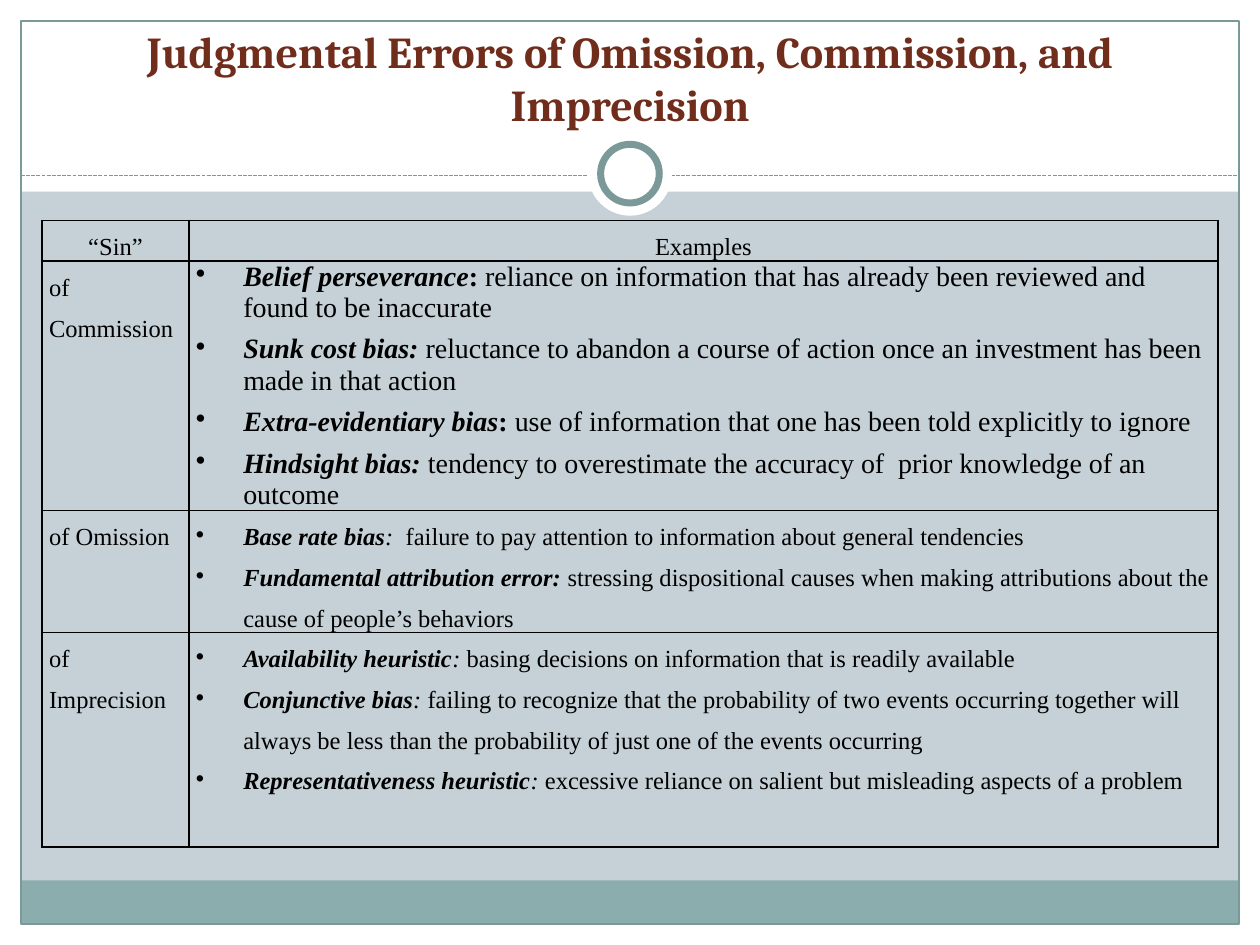
from lxml import etree
from pptx import Presentation
from pptx.dml.color import RGBColor
from pptx.enum.dml import MSO_LINE
from pptx.enum.shapes import MSO_CONNECTOR, MSO_SHAPE
from pptx.enum.text import MSO_ANCHOR, MSO_AUTO_SIZE, PP_ALIGN
from pptx.oxml import parse_xml
from pptx.oxml.ns import nsdecls, qn
from pptx.util import Pt

TEAL = "7C999A"
SERIF = "Times New Roman"


def color(hex_code):
    return RGBColor.from_string(hex_code)


def add_panel(kind, box, fill=None, line=None, width=0.75):
    panel = slide.shapes.add_shape(kind, *map(Pt, box))
    panel.shadow.inherit = False
    if fill:
        panel.fill.solid()
        panel.fill.fore_color.rgb = color(fill)
    else:
        panel.fill.background()
    if line:
        panel.line.color.rgb = color(line)
        panel.line.width = Pt(width)
    else:
        panel.line.fill.background()


prs = Presentation()
prs.slide_width, prs.slide_height = Pt(720), Pt(540)
slide = prs.slides.add_slide(prs.slide_layouts[5])
slide.background.fill.solid()
slide.background.fill.fore_color.rgb = color("C5D1D7")

# Frame: white margins, footer band, outline, dashed rule and ring
for margin in [(0, 528, 720, 12), (0, 0, 720, 109.5),
               (0, 0, 12, 540), (708, 0, 12, 540)]:
    add_panel(MSO_SHAPE.RECTANGLE, margin, "FFFFFF")
add_panel(MSO_SHAPE.RECTANGLE, (11.75, 503, 696, 24.75), "8CADAE")
add_panel(MSO_SHAPE.RECTANGLE, (12, 12, 696, 516), line=TEAL)

rule = slide.shapes.add_connector(MSO_CONNECTOR.STRAIGHT, Pt(12), Pt(100.5), Pt(708), Pt(100.5))
rule.line.color.rgb = color(TEAL)
rule.line.width = Pt(0.75)
rule.line.dash_style = MSO_LINE.SQUARE_DOT
etree.SubElement(rule._element.spPr, qn("a:effectLst"))

add_panel(MSO_SHAPE.OVAL, (336, 75.25, 48, 48), "FFFFFF")
add_panel(MSO_SHAPE.OVAL, (343.25, 82.5, 33.5, 33.5), "FFFFFF", TEAL, 4)

# Title, brought in front of the white margins
title = slide.shapes.title
slide.shapes._spTree.append(title._element)
title.left, title.top, title.width, title.height = Pt(24), Pt(18), Pt(672), Pt(60)
title.text = "Judgmental Errors of Omission, Commission, and Imprecision"
title.text_frame.auto_size = MSO_AUTO_SIZE.NONE
title.text_frame.word_wrap = True
title.text_frame.vertical_anchor = MSO_ANCHOR.BOTTOM
heading = title.text_frame.paragraphs[0]
heading.alignment = PP_ALIGN.CENTER
heading.font.name, heading.font.size, heading.font.bold = "Cambria", Pt(25.2), True
heading.font.color.rgb = color("712D1C")

# Each example: term, colon, colon is bold, colon is italic, explanation
sins = [
    ("of Commission", 140, 16, [
        ("Belief perseverance", ": ", True, False,
         "reliance on information that has already been reviewed and found to be inaccurate"),
        ("Sunk cost bias", ": ", True, True,
         "reluctance to abandon a course of action once an investment has been made in that action"),
        ("Extra-evidentiary bias", ": ", True, False,
         "use of information that one has been told explicitly to ignore"),
        ("Hindsight bias", ": ", True, True,
         "tendency to overestimate the accuracy of  prior knowledge of an outcome"),
    ]),
    ("of Omission", 69.75, 14, [
        ("Base rate bias", ":", False, True,
         "  failure to pay attention to information about general tendencies"),
        ("Fundamental attribution error", ": ", True, True,
         "stressing dispositional causes when making attributions about the cause of people’s behaviors"),
    ]),
    ("of Imprecision", 122.5, 14, [
        ("Availability heuristic", ": ", False, True,
         "basing decisions on information that is readily available"),
        ("Conjunctive bias", ":", False, True,
         " failing to recognize that the probability of two events occurring together will "
         "always be less than the probability of just one of the events occurring"),
        ("Representativeness heuristic", ":", False, True,
         " excessive reliance on salient but misleading aspects of a problem"),
    ]),
]

table = slide.shapes.add_table(4, 2, Pt(24), Pt(126), Pt(672), Pt(350)).table
table.first_row = table.horz_banding = False
table.columns[0].width, table.columns[1].width = Pt(84), Pt(588)
table.rows[0].height = Pt(18)
table.cell(0, 0).text = "“Sin”"
table.cell(0, 1).text = "Examples"
for row, (sin, height, size, examples) in enumerate(sins, 1):
    table.rows[row].height = Pt(height)
    table.cell(row, 0).text = sin
    frame = table.cell(row, 1).text_frame
    for i, (term, colon, bold, italic, explanation) in enumerate(examples):
        para = frame.add_paragraph() if i else frame.paragraphs[0]
        if size == 16:
            para.space_after = Pt(6)
        else:
            para.line_spacing = 1.5
        props = para._p.get_or_add_pPr()
        props.set("marL", str(Pt(27)))
        props.set("indent", str(-Pt(27)))
        etree.SubElement(props, qn("a:buChar")).set("char", "•")
        para.font.size = Pt(size)
        for words, is_bold, is_italic in [(term, True, True), (colon, bold, italic),
                                          (explanation, False, False)]:
            run = para.add_run()
            run.text, run.font.bold, run.font.italic = words, is_bold, is_italic

for index, cell in enumerate(table.iter_cells()):
    cell.margin_left = cell.margin_right = Pt(4)
    cell.margin_top = cell.margin_bottom = 0
    for side in ("lnL", "lnR", "lnT", "lnB"):
        cell._tc.get_or_add_tcPr().append(parse_xml(
            f'<a:{side} {nsdecls("a")} w="{Pt(1)}"><a:solidFill>'
            f'<a:srgbClr val="000000"/></a:solidFill></a:{side}>'))
    cell.fill.background()
    for para in cell.text_frame.paragraphs:
        if index < 2 or index % 2 == 0:
            para.line_spacing = 1.5
            para.font.size = Pt(14)
        if index < 2:
            para.alignment = PP_ALIGN.CENTER
        para.font.name = SERIF
        para.font.color.rgb = color("000000")

prs.save("out.pptx")
